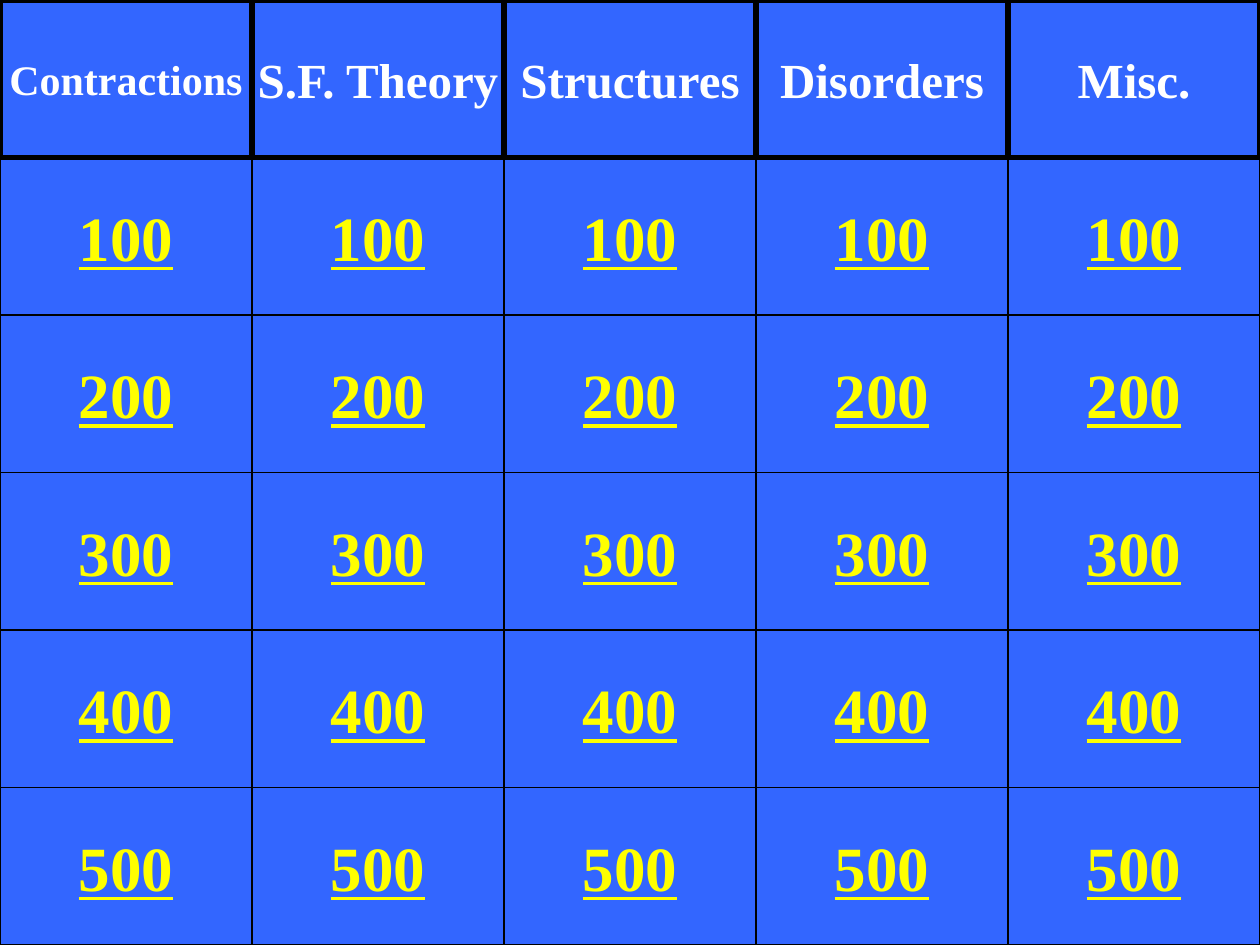
from dataclasses import dataclass

from pptx import Presentation
from pptx.dml.color import RGBColor
from pptx.enum.shapes import MSO_SHAPE
from pptx.enum.text import MSO_ANCHOR, PP_ALIGN
from pptx.util import Cm, Pt

HEADER_SHAPE = MSO_SHAPE.RECTANGLE
BUTTON_SHAPE = MSO_SHAPE.ACTION_BUTTON_CUSTOM
MIDDLE = MSO_ANCHOR.MIDDLE
CENTER = PP_ALIGN.CENTER

COLORS = {"board": "3366FF", "border": "000000", "category": "FFFFFF", "points": "FFFF00"}
FONT = "Times New Roman"
BLANK_LAYOUT = 6

BOARD_WIDTH, BOARD_HEIGHT = Cm(25.4), Cm(19.05)
CATEGORIES = {
    "Contractions": 24,
    "S.F. Theory": 28,
    "Structures": 28,
    "Disorders": 28,
    "Misc.": 28,
}
POINTS = (100, 200, 300, 400, 500)
CELL_WIDTH = BOARD_WIDTH // len(CATEGORIES)
CELL_HEIGHT = BOARD_HEIGHT // (len(POINTS) + 1)


@dataclass(frozen=True)
class CellStyle:
    outline: MSO_SHAPE
    border: float
    color: str
    underline: bool


@dataclass(frozen=True)
class Cell:
    text: str
    column: int
    row: int
    size: int
    style: CellStyle


CATEGORY_STYLE = CellStyle(HEADER_SHAPE, 3, "category", False)
POINTS_STYLE = CellStyle(BUTTON_SHAPE, 0.75, "points", True)


def rgb(name: str) -> RGBColor:
    return RGBColor.from_string(COLORS[name])


def apply_format(target, values: dict) -> None:
    for attribute, value in values.items():
        setattr(target, attribute, value)


def draw_cell(slide, cell: Cell) -> None:
    style = cell.style
    tile = slide.shapes.add_shape(
        style.outline,
        cell.column * CELL_WIDTH,
        cell.row * CELL_HEIGHT,
        CELL_WIDTH,
        CELL_HEIGHT,
    )
    tile.shadow.inherit = False
    tile.fill.solid()
    tile.fill.fore_color.rgb = rgb("board")
    tile.line.color.rgb = rgb("border")
    tile.line.width = Pt(style.border)

    frame = tile.text_frame
    apply_format(frame, {"word_wrap": False, "vertical_anchor": MIDDLE})
    paragraph = frame.paragraphs[0]
    paragraph.alignment = CENTER
    label = paragraph.add_run()
    label.text = cell.text
    apply_format(label.font, {
        "name": FONT,
        "size": Pt(cell.size),
        "bold": True,
        "underline": style.underline,
    })
    label.font.color.rgb = rgb(style.color)


def main() -> None:
    deck = Presentation()
    apply_format(deck, {"slide_width": BOARD_WIDTH, "slide_height": BOARD_HEIGHT})
    slide = deck.slides.add_slide(deck.slide_layouts[BLANK_LAYOUT])
    slide.background.fill.solid()
    slide.background.fill.fore_color.rgb = rgb("board")

    point_cells = [
        Cell(str(points), column, row, 36, POINTS_STYLE)
        for column in range(len(CATEGORIES))
        for row, points in enumerate(POINTS, start=1)
    ]
    category_cells = [
        Cell(category, column, 0, size, CATEGORY_STYLE)
        for column, (category, size) in enumerate(CATEGORIES.items())
    ]
    # Categories come last so their thick borders cover the buttons below.
    for cell in point_cells + category_cells:
        draw_cell(slide, cell)

    deck.save("out.pptx")


if __name__ == "__main__":
    main()
